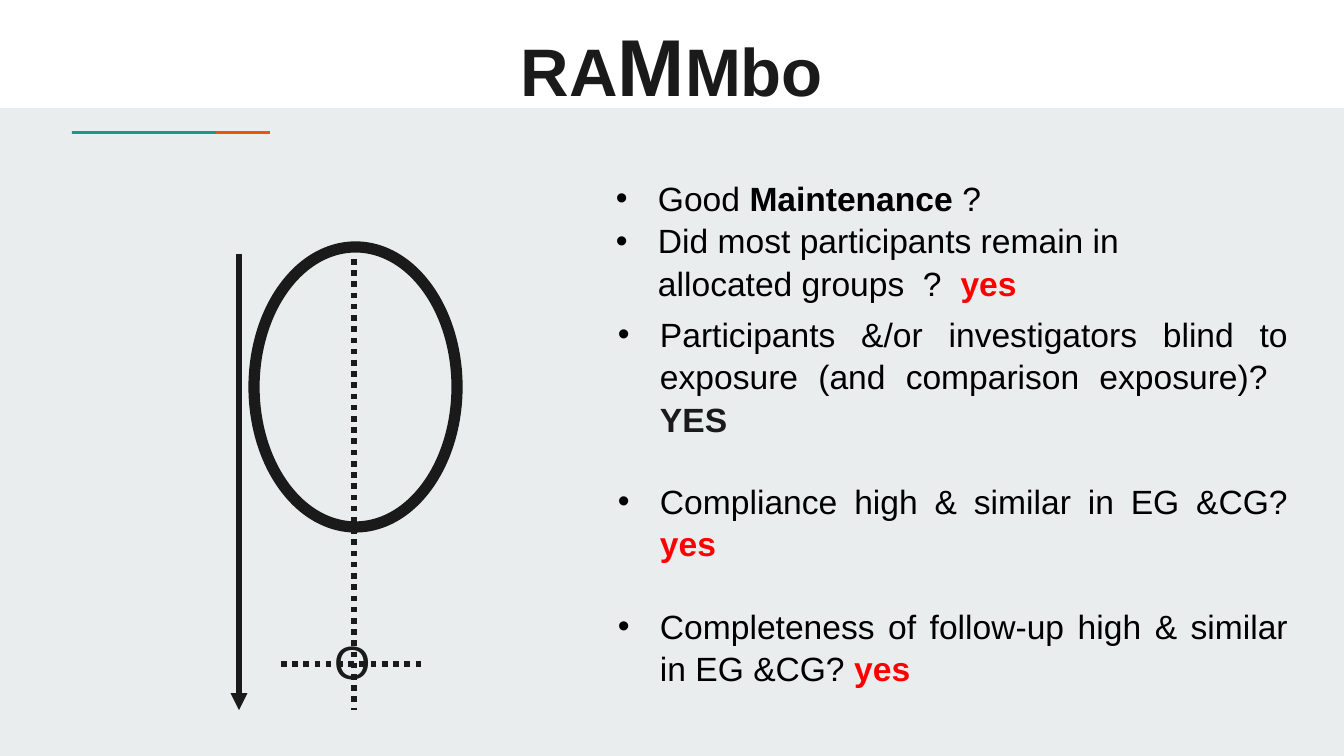
"""Build the RAMMbo slide on maintenance, with its study diagram and checklist."""
from lxml.etree import SubElement
from pptx import Presentation
from pptx.dml.color import RGBColor
from pptx.enum.dml import MSO_LINE as Dash
from pptx.enum.shapes import MSO_CONNECTOR as Link, MSO_SHAPE as Preset
from pptx.enum.text import MSO_ANCHOR as Anchor, PP_ALIGN as Align
from pptx.oxml.ns import qn
from pptx.util import Pt

PX = 6804
INK, BLACK, RED = "1A1A1A", "000000", "FF0000"
rgb = RGBColor.from_string


def write(paragraph, text, size=18, color=BLACK, bold=False):
    run = paragraph.add_run()
    run.text = text
    run.font.name = "Arial"
    run.font.size = Pt(size)
    run.font.bold = bold
    run.font.color.rgb = rgb(color)


def text_area(left, top, width, height, inset_x, inset_y, wrap=True):
    box = slide.shapes.add_textbox(left * PX, top * PX, width * PX, height * PX)
    frame = box.text_frame
    frame.word_wrap = wrap
    frame.margin_left = frame.margin_right = inset_x * PX
    frame.margin_top = frame.margin_bottom = inset_y * PX
    return frame


deck = Presentation()
deck.slide_width, deck.slide_height = 1344 * PX, 756 * PX
slide = deck.slides.add_slide(deck.slide_layouts[6])
slide.background.fill.solid()
slide.background.fill.fore_color.rgb = rgb("E9EDEE")

for left, top, width, height, color in [
    (0, 0, 1344, 108, "FFFFFF"),
    (128, 131, 142, 3, "EB5600"),
    (72, 131, 144, 3, "1A9988"),
]:
    band = slide.shapes.add_shape(Preset.RECTANGLE, left * PX, top * PX, width * PX, height * PX)
    band.shadow.inherit = False
    band.fill.solid()
    band.fill.fore_color.rgb = rgb(color)
    band.line.fill.background()

title = text_area(107, 0, 1130, 121, 13, 8)
title.vertical_anchor = Anchor.BOTTOM
title.paragraphs[0].alignment = Align.CENTER
for letters, size in [("RA", 36), ("M", 43.2), ("Mbo", 36)]:
    write(title.paragraphs[0], letters, size=size, color=INK, bold=True)

population = slide.shapes.add_shape(Preset.OVAL, 254 * PX, 247 * PX, 203 * PX, 280 * PX)
population.shadow.inherit = False
population.fill.background()
population.line.color.rgb = rgb(INK)
population.line.width = Pt(6)

for x1, y1, x2, y2, is_arrow in [
    (239, 254, 239, 710, True),
    (354, 259, 354, 710, False),
    (281, 664, 421, 664, False),
]:
    axis = slide.shapes.add_connector(Link.STRAIGHT, x1 * PX, y1 * PX, x2 * PX, y2 * PX)
    axis.line.color.rgb = rgb(INK)
    axis.line.width = Pt(3)
    properties = axis._element.spPr
    if is_arrow:
        SubElement(properties.find(qn("a:ln")), qn("a:tailEnd"), type="triangle")
    else:
        axis.line.dash_style = Dash.ROUND_DOT
    SubElement(properties, qn("a:effectLst"))

outcome = text_area(323, 628, 52, 67, 11, 5, wrap=False)
write(outcome.paragraphs[0], "O", size=25, color=INK)

maintenance = [
    [("Good ", BLACK, False), ("Maintenance ", BLACK, True), ("?", BLACK, False)],
    [("Did most participants remain in allocated groups  ?  ", BLACK, False), ("yes", RED, True)],
]
checks = [
    [("Participants &/or investigators blind to exposure (and comparison exposure)?  ", BLACK, False),
     ("YES", INK, True)],
    [("Compliance high & similar in EG &CG? ", BLACK, False), ("yes", RED, True)],
    [("Completeness of follow-up high & similar in EG &CG? ", BLACK, False), ("yes", RED, True)],
]
for questions, area, align, gap in [
    (maintenance, (605, 171, 642, 133, 11, 5), Align.LEFT, 0),
    (checks, (605, 305, 696, 411, 13, 7), Align.JUSTIFY, 40),
]:
    frame = text_area(*area)
    for index, question in enumerate(questions):
        line = frame.add_paragraph() if index else frame.paragraphs[0]
        line.alignment = align
        line.line_spacing = 1.05
        line.space_before = (gap if index else 0) * PX
        layout = line._p.get_or_add_pPr()
        layout.set("marL", str(42 * PX))
        layout.set("indent", str(-42 * PX))
        SubElement(SubElement(layout, qn("a:buClr")), qn("a:srgbClr"), val=BLACK)
        SubElement(layout, qn("a:buFont"), typeface="Arial")
        SubElement(layout, qn("a:buChar"), char="•")
        for text, color, bold in question:
            write(line, text, color=color, bold=bold)

deck.save("out.pptx")
